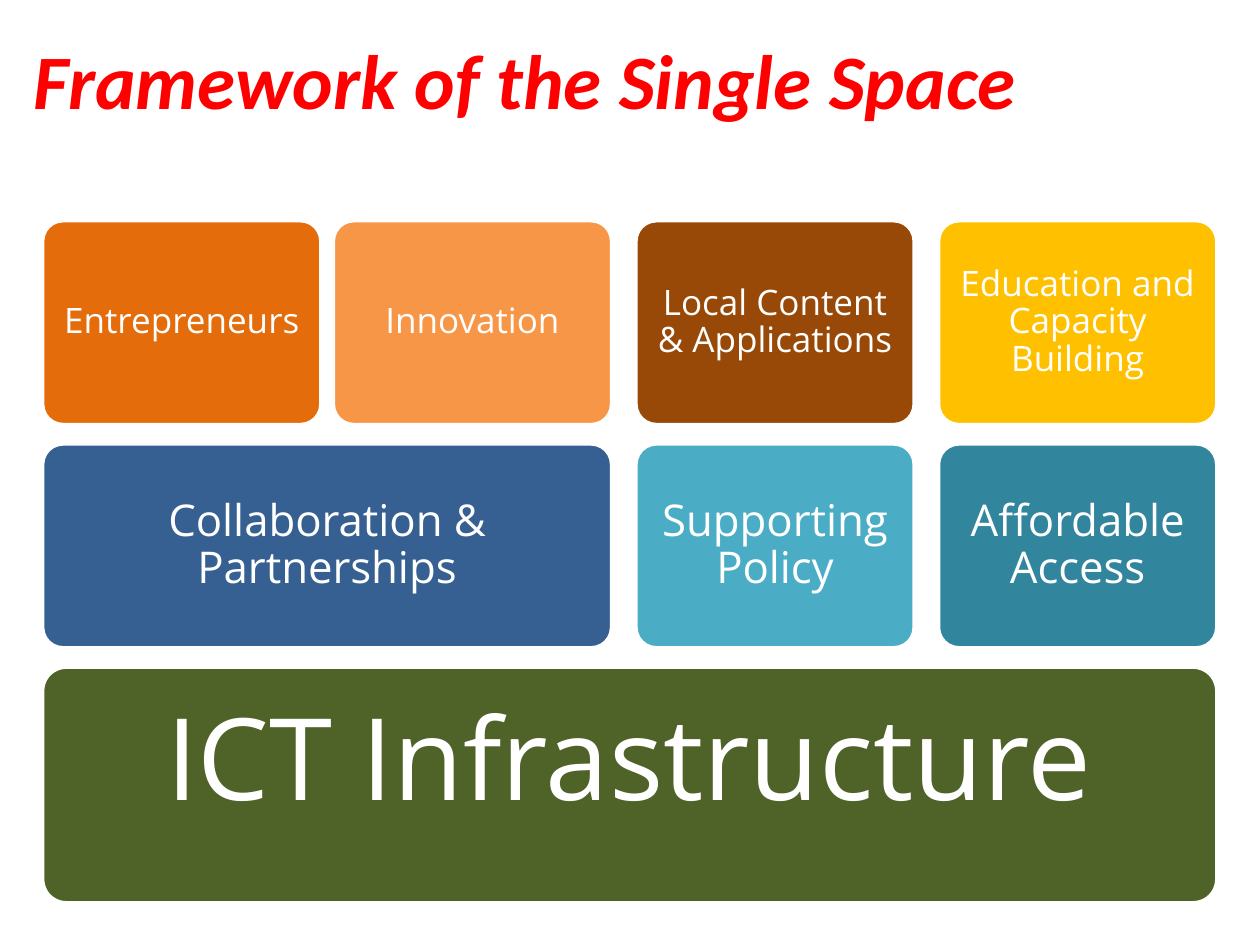
from dataclasses import dataclass

from pptx import Presentation
from pptx.dml.color import RGBColor
from pptx.enum.shapes import MSO_SHAPE
from pptx.enum.text import MSO_ANCHOR, PP_ALIGN
from pptx.util import Cm, Pt


@dataclass(frozen=True)
class Theme:
    white: str = "FFFFFF"
    red: str = "FF0000"
    head: str = "Calibri"
    body: str = "Open Sans"
    title: int = 44
    base: int = 65
    mid: int = 25
    top: int = 20


@dataclass(frozen=True)
class Block:
    text: str
    fill: str
    col: int
    span: int = 1


@dataclass(frozen=True)
class Tier:
    height: float
    size: int
    inset: float
    anchor: MSO_ANCHOR
    blocks: tuple[Block, ...]


THEME = Theme()
WIDTH = 5.61
LEFT, TOP = 0.86, 4.45
GAPS = (0.25, 0.49, 0.49)
ROW_GAP = 0.39
COLS = [LEFT + n * WIDTH + sum(GAPS[:n]) for n in range(4)]

TIERS = (
    Tier(4.11, THEME.top, 0.08, MSO_ANCHOR.MIDDLE, (
        Block("Entrepreneurs", "E46C0A", 0),
        Block("Innovation", "F79646", 1),
        Block("Local Content & Applications", "984807", 2),
        Block("Education and Capacity Building", "FFC000", 3),
    )),
    Tier(4.11, THEME.mid, 0.13, MSO_ANCHOR.MIDDLE, (
        Block("Collaboration & Partnerships", "376092", 0, 2),
        Block("Supporting Policy", "4BACC6", 2),
        Block("Affordable Access", "31859C", 3),
    )),
    Tier(4.75, THEME.base, 0.56, MSO_ANCHOR.TOP, (
        Block("ICT Infrastructure", "4F6228", 0, 4),
    )),
)


def assign(item, values: dict) -> None:
    for name, value in values.items():
        setattr(item, name, value)


def write(frame, text: str, color: str, font: dict, para: dict) -> None:
    line = frame.paragraphs[0]
    line.text = text
    assign(line, para)
    assign(line.font, font)
    line.font.color.rgb = RGBColor.from_string(color)


def draw_title(slide) -> None:
    frame = slide.shapes.add_textbox(Cm(0.43), Cm(0), Cm(22.43), Cm(3.18)).text_frame
    assign(frame, {"word_wrap": True, "vertical_anchor": MSO_ANCHOR.MIDDLE})
    font = {"name": THEME.head, "size": Pt(THEME.title), "bold": True, "italic": True}
    write(frame, "Framework of the Single Space", THEME.red, font,
          {"alignment": PP_ALIGN.LEFT})


def draw_block(slide, block: Block, tier: Tier, top: float) -> None:
    left = COLS[block.col]
    width = COLS[block.col + block.span - 1] + WIDTH - left
    shape = slide.shapes.add_shape(MSO_SHAPE.ROUNDED_RECTANGLE,
                                   Cm(left), Cm(top), Cm(width), Cm(tier.height))
    shape.adjustments[0] = 0.1
    shape.shadow.inherit = False
    shape.fill.solid()
    shape.fill.fore_color.rgb = RGBColor.from_string(block.fill)
    shape.line.color.rgb = RGBColor.from_string(THEME.white)
    shape.line.width = Pt(2)

    frame = shape.text_frame
    sides = ("left", "top", "right", "bottom")
    assign(frame, {f"margin_{side}": Cm(tier.inset) for side in sides})
    assign(frame, {"word_wrap": True, "vertical_anchor": tier.anchor})
    write(frame, block.text, THEME.white,
          {"name": THEME.body, "size": Pt(tier.size)},
          {"alignment": PP_ALIGN.CENTER, "line_spacing": 0.9,
           "space_after": Pt(0.35 * tier.size)})


def main() -> None:
    deck = Presentation()
    assign(deck, {"slide_width": Cm(25.4), "slide_height": Cm(19.05)})
    slide = deck.slides.add_slide(deck.slide_layouts[6])
    draw_title(slide)
    top = TOP
    for tier in TIERS:
        for block in tier.blocks:
            draw_block(slide, block, tier, top)
        top += tier.height + ROW_GAP
    deck.save("out.pptx")


if __name__ == "__main__":
    main()
